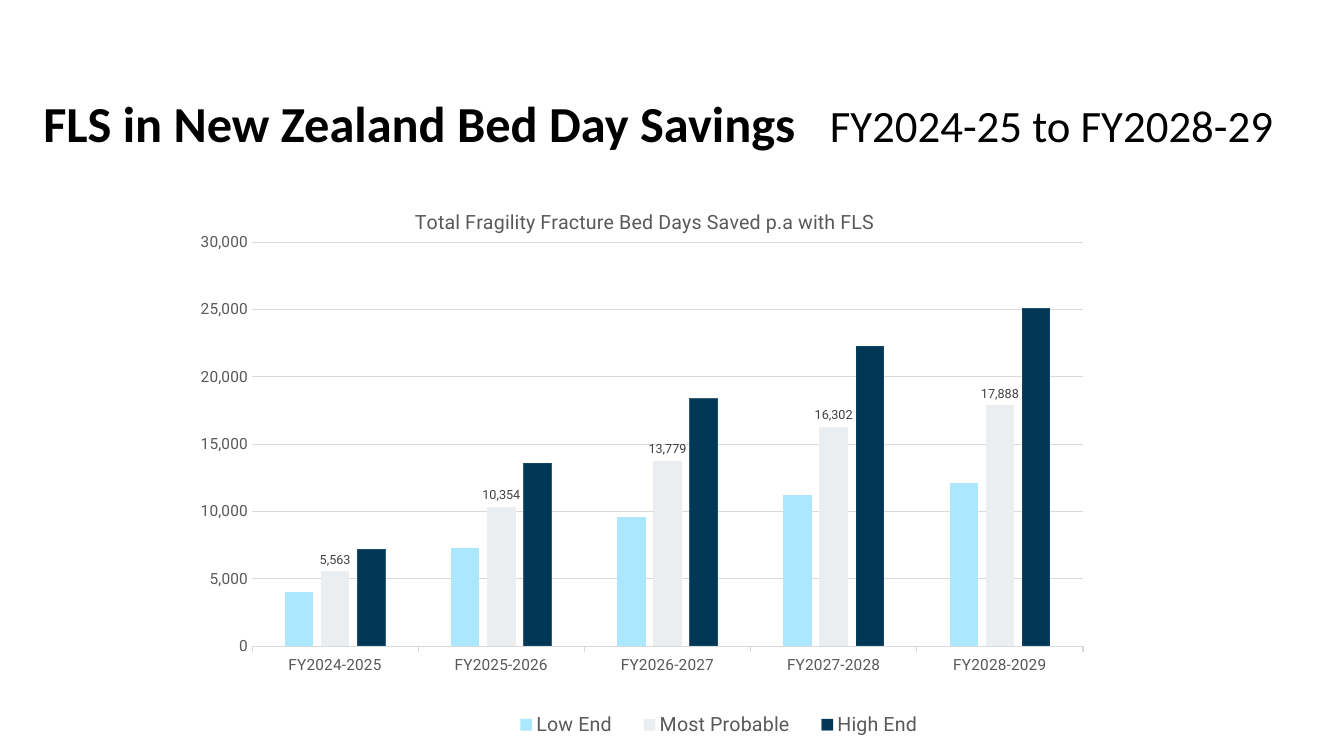
from lxml.etree import SubElement
from pptx import Presentation
from pptx.chart.data import CategoryChartData
from pptx.dml.color import RGBColor
from pptx.enum.chart import XL_CHART_TYPE, XL_LABEL_POSITION, XL_LEGEND_POSITION, XL_TICK_MARK
from pptx.enum.text import MSO_ANCHOR, PP_ALIGN
from pptx.oxml import parse_xml
from pptx.oxml.ns import nsdecls, qn
from pptx.util import Inches, Pt

COLORS = {"black": "000000", "white": "FFFFFF", "gray": "595959", "label": "404040",
          "grid": "D9D9D9", "low": "ABE7FF", "probable": "EBEEF1", "high": "003756"}
YEARS = [f"FY{year}-{year + 1}" for year in range(2024, 2029)]
SAVINGS = [
    ("Low End", "low", (4000, 7300, 9600, 11200, 12100)),
    ("Most Probable", "probable", (5563, 10354, 13779, 16302, 17888)),
    ("High End", "high", (7200, 13600, 18400, 22300, 25100)),
]


def color(name):
    return RGBColor.from_string(COLORS[name])


def set_font(font, name, size, shade):
    font.name, font.size, font.bold = name, Pt(size), False
    font.color.rgb = color(shade)


def set_line(line, shade):
    line.color.rgb = color(shade)
    line.width = Pt(0.75)


def place(element, index, **fractions):
    """Give a chart part a manual layout in fractions of the chart area."""
    for old in element.findall(qn("c:layout")):
        element.remove(old)
    target = '<c:layoutTarget val="inner"/>' if element.tag == qn("c:plotArea") else ""
    modes = "".join(f'<c:{key}Mode val="edge"/>' for key in "xy")
    values = "".join(f'<c:{key} val="{value}"/>' for key, value in fractions.items())
    element.insert(index, parse_xml(
        f'<c:layout {nsdecls("c")}><c:manualLayout>{target}{modes}{values}'
        "</c:manualLayout></c:layout>"))


class SavingsSlide:
    heading_font = "Calibri"
    chart_font = "Roboto"

    def __init__(self, deck):
        self.page = deck.slides.add_slide(deck.slide_layouts[5])
        self.page.background.fill.solid()
        self.page.background.fill.fore_color.rgb = color("white")

    def title(self, name, period):
        box = self.page.shapes.title
        box.left, box.top, box.width, box.height = map(Inches, (0.33, 0.86, 12.67, 0.71))
        frame = box.text_frame
        frame.word_wrap = True
        frame.vertical_anchor = MSO_ANCHOR.TOP
        paragraph = frame.paragraphs[0]
        paragraph.alignment = PP_ALIGN.LEFT
        stops = SubElement(paragraph._p.get_or_add_pPr(), qn("a:tabLst"))
        SubElement(stops, qn("a:tab"), pos=str(Inches(7.8)), algn="l")
        paragraph.font.name = self.heading_font
        for text, size, bold in ((name + "\t", 36, True), (period, 32, False)):
            span = paragraph.add_run()
            span.text = text
            set_font(span.font, self.heading_font, size, "black")
            span.font.bold = bold

    def chart(self, heading):
        data = CategoryChartData(number_format="#,##0")
        data.categories = YEARS
        for name, _, values in SAVINGS:
            data.add_series(name, values)
        chart = self.page.shapes.add_chart(
            XL_CHART_TYPE.COLUMN_CLUSTERED, Inches(1.77), Inches(1.81),
            Inches(9.24), Inches(5.59), data).chart
        set_font(chart.font, self.chart_font, 10, "black")
        self.chart_title(chart, heading)
        self.axes(chart)
        self.columns(chart.plots[0])
        self.legend(chart)
        place(chart._chartSpace.chart.plotArea, 0, x=0.079, y=0.106, w=0.892, h=0.717)

    def chart_title(self, chart, heading):
        frame = chart.chart_title.text_frame
        frame.text = heading
        set_font(frame.paragraphs[0].font, self.chart_font, 14, "gray")
        place(chart.chart_title._element, 1, x=0.25, y=0.04)

    def axes(self, chart):
        years, days = chart.category_axis, chart.value_axis
        for axis in (years, days):
            set_font(axis.tick_labels.font, self.chart_font, 11, "gray")
        years.major_tick_mark = XL_TICK_MARK.OUTSIDE
        set_line(years.format.line, "grid")
        days.major_tick_mark = XL_TICK_MARK.NONE
        days.format.line.fill.background()
        days.minimum_scale, days.maximum_scale, days.major_unit = 0, 30000, 5000
        days.tick_labels.number_format = "#,##0"
        days.tick_labels.number_format_is_linked = False
        set_line(days.major_gridlines.format.line, "grid")

    def columns(self, plot):
        plot.gap_width, plot.overlap, plot.vary_by_categories = 230, -27, False
        for series, (_, shade, _) in zip(plot.series, SAVINGS):
            series.format.fill.solid()
            series.format.fill.fore_color.rgb = color(shade)
        _, probable, high = plot.series
        labels = probable.data_labels
        labels.show_value = True
        labels.position = XL_LABEL_POSITION.OUTSIDE_END
        labels.number_format, labels.number_format_is_linked = "#,##0", False
        set_font(labels.font, self.chart_font, 9, "label")
        set_line(high.format.line, "probable")
        outline = high._element.find(f'{qn("c:spPr")}/{qn("a:ln")}')
        for shade in outline.iter(qn("a:srgbClr")):
            SubElement(shade, qn("a:alpha"), val="22000")

    def legend(self, chart):
        chart.has_legend = True
        chart.legend.position = XL_LEGEND_POSITION.BOTTOM
        chart.legend.include_in_layout = False
        set_font(chart.legend.font, self.chart_font, 14, "gray")
        place(chart.legend._element, 1, x=0.34, y=0.93, w=0.48, h=0.065)


def main():
    deck = Presentation()
    deck.slide_width, deck.slide_height = Inches(13.33), Inches(7.5)
    slide = SavingsSlide(deck)
    slide.title("FLS in New Zealand Bed Day Savings", "FY2024-25 to FY2028-29")
    slide.chart("Total Fragility Fracture Bed Days Saved p.a with FLS")
    deck.save("out.pptx")


if __name__ == "__main__":
    main()
